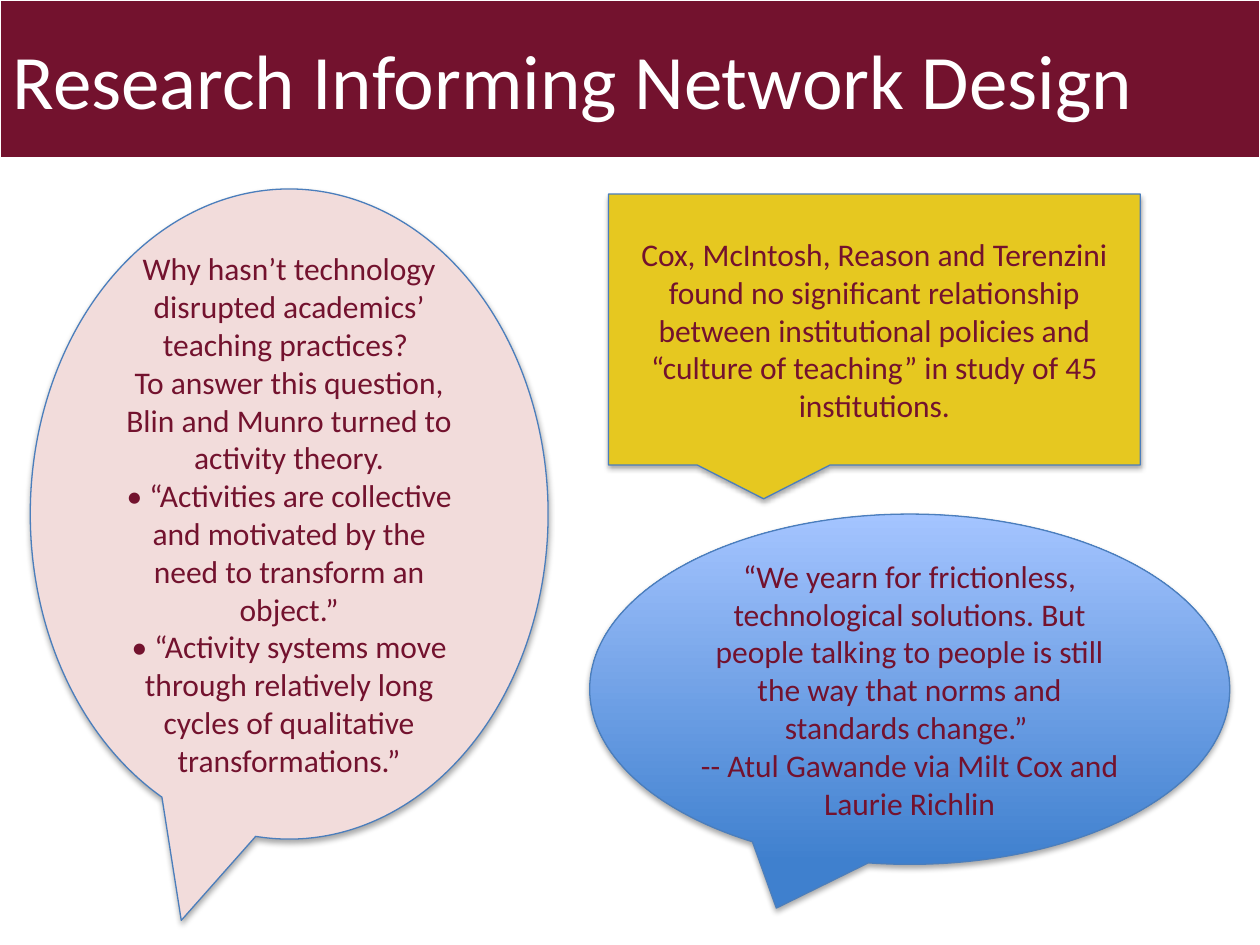
from lxml.etree import SubElement
from pptx import Presentation
from pptx.dml.color import RGBColor
from pptx.enum.shapes import MSO_SHAPE as SHAPE
from pptx.enum.text import MSO_ANCHOR as ANCHOR, MSO_AUTO_SIZE as AUTO, PP_ALIGN as ALIGN
from pptx.oxml.ns import qn
from pptx.util import Inches, Pt

MAROON = RGBColor(0x73, 0x12, 0x2E)
WHITE = RGBColor(0xFF, 0xFF, 0xFF)
GOLD = RGBColor(0xE6, 0xC8, 0x20)
PINK = RGBColor(0xF2, 0xDC, 0xDB)
BLUE = RGBColor(0x3F, 0x80, 0xCE)
LIGHT_BLUE = RGBColor(0xA4, 0xC4, 0xFF)
OUTLINE = RGBColor(0x4B, 0x7E, 0xBC)


class Deck:
    """Holds the text style and the current slide, and draws its elements."""

    font = "Calibri"

    def __init__(self, prs):
        self.s = prs.slides.add_slide(prs.slide_layouts[5])

    def place(self, sp, x, y, w, h):
        sp.left, sp.top, sp.width, sp.height = map(Inches, (x, y, w, h))

    def outline(self, sp, color):
        sp.line.color.rgb = color
        sp.line.width = Pt(0.75)

    def add_text(self, sp, paragraphs, size, color, align):
        tf = sp.text_frame
        tf.word_wrap = True
        tf.auto_size = AUTO.NONE
        tf.vertical_anchor = ANCHOR.MIDDLE
        for i, text in enumerate(paragraphs):
            p = tf.add_paragraph() if i else tf.paragraphs[0]
            p.alignment = align
            r = p.add_run()
            r.text = text
            r.font.name = self.font
            r.font.size = Pt(size)
            r.font.color.rgb = color

    def title(self, text):
        sp = self.s.shapes.title
        self.place(sp, 0, 0, 10, 1.25)
        sp.fill.solid()
        sp.fill.fore_color.rgb = MAROON
        self.outline(sp, WHITE)
        self.add_text(sp, [text], 44, WHITE, ALIGN.LEFT)

    def shadow(self, sp):
        sp.shadow.inherit = False
        effects = sp._element.spPr.find(qn("a:effectLst"))
        outer = SubElement(effects, qn("a:outerShdw"), blurRad=str(Pt(3.1)),
                           dist=str(Pt(1.8)), dir="5400000", rotWithShape="0")
        color = SubElement(outer, qn("a:srgbClr"), val="000000")
        SubElement(color, qn("a:alpha"), val="35000")

    def callout(self, kind, box, colors, paragraphs):
        sp = self.s.shapes.add_shape(kind, *map(Inches, box))
        if len(colors) > 1:
            sp.fill.gradient()
            sp.fill.gradient_angle = 90
            for stop, color in zip(sp.fill.gradient_stops, colors):
                stop.color.rgb = color
        else:
            sp.fill.solid()
            sp.fill.fore_color.rgb = colors[0]
        self.outline(sp, OUTLINE)
        self.shadow(sp)
        self.add_text(sp, paragraphs, 18, MAROON, ALIGN.CENTER)


def main():
    prs = Presentation()
    prs.slide_width, prs.slide_height = Inches(10), Inches(7.5)
    deck = Deck(prs)
    deck.title("Research Informing Network Design")
    deck.callout(SHAPE.RECTANGULAR_CALLOUT, (4.83, 1.54, 4.22, 2.15), [GOLD], [
        "Cox, McIntosh, Reason and Terenzini found no significant relationship between "
        "institutional policies and “culture of teaching” in study of 45 institutions.",
    ])
    deck.callout(SHAPE.OVAL_CALLOUT, (0.24, 1.5, 4.11, 5.16), [PINK], [
        "Why hasn’t technology disrupted academics’ teaching practices? ",
        "To answer this question, Blin and Munro turned to activity theory.",
        "• “Activities are collective and motivated by the need to transform an object.”",
        "• “Activity systems move through relatively long cycles of qualitative "
        "transformations.”",
    ])
    deck.callout(SHAPE.OVAL_CALLOUT, (4.68, 4.08, 5.08, 2.78), [BLUE, LIGHT_BLUE], [
        "“We yearn for frictionless, technological solutions. But people talking to people "
        "is still the way that norms and standards change.” ",
        "-- Atul Gawande via Milt Cox and Laurie Richlin",
    ])
    prs.save("out.pptx")


if __name__ == "__main__":
    main()
